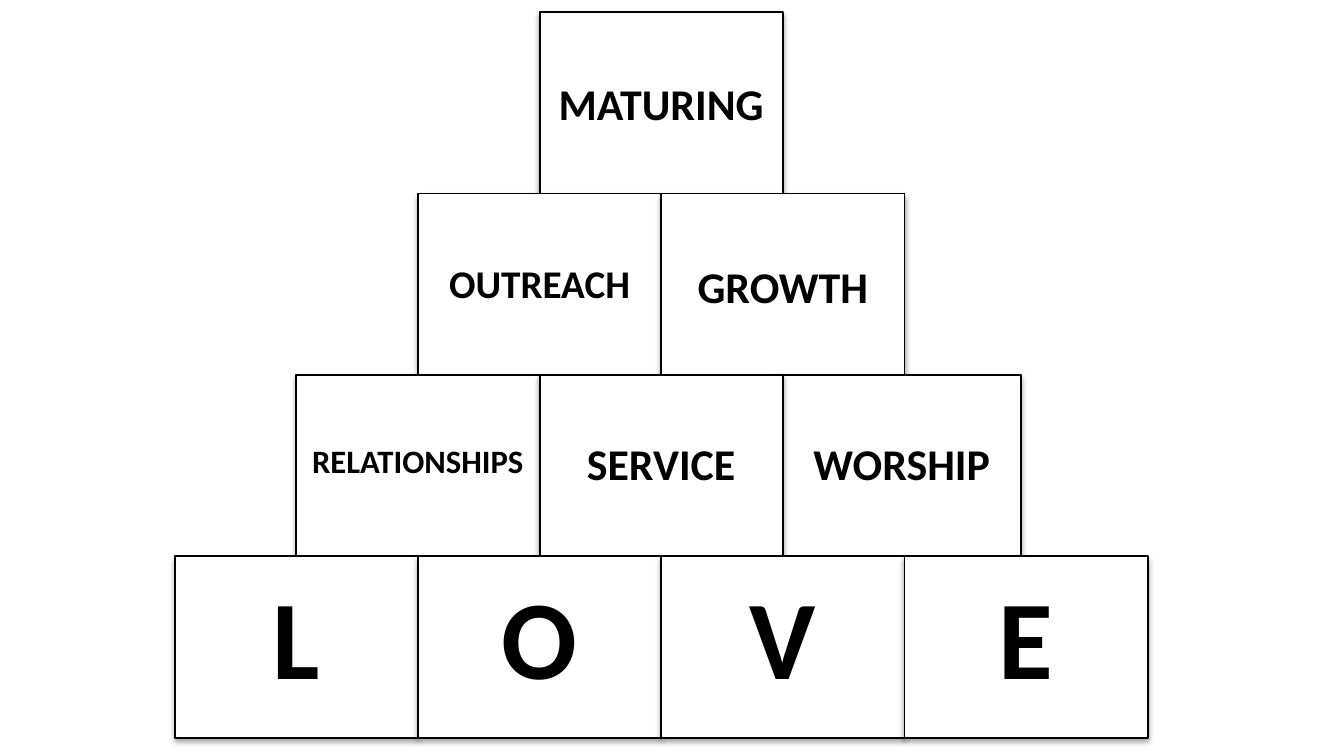
import pptx
import pptx.util
import pptx.dml.color
import pptx.enum.shapes
import pptx.enum.text
import pptx.oxml.ns
from lxml import etree

Inches = pptx.util.Inches
Pt = pptx.util.Pt

COLORS = {"ink": "000000", "paper": "FFFFFF"}
FONT = "Calibri"
WIDE, HIGH = 1.81, 1.35

# Row, column, word, text size, label drop, label height; in drawing order
BLOCKS = [
    (0, 0, "MATURING", 23.5, 0.43, 0.5),
    (1, 0, "OUTREACH", 21, 0.44, 0.45),
    (1, 1, "GROWTH", 23.5, 0.44, 0.5),
    (2, 0, "RELATIONSHIPS", 17.5, 0.44, 0.4),
    (2, 2, "WORSHIP", 23.5, 0.41, 0.5),
    (2, 1, "SERVICE", 23.5, 0.41, 0.5),
] + [(3, col, word, 60, 0.03, 1.11) for col, word in enumerate("LOVE")]


def color(name):
    return pptx.dml.color.RGBColor.from_string(COLORS[name])


def add_shadow(shape):
    """Give the shape a soft shadow straight below it."""
    shape.shadow.inherit = False
    qn = pptx.oxml.ns.qn
    effects = shape._element.spPr.find(qn("a:effectLst"))
    outer = etree.SubElement(
        effects, qn("a:outerShdw"), blurRad=str(Pt(3.1)), dist=str(Pt(1.8)),
        dir="5400000", rotWithShape="0")
    tint = etree.SubElement(outer, qn("a:srgbClr"), val=COLORS["ink"])
    etree.SubElement(tint, qn("a:alpha"), val="35000")


def add_block(slide, left, top, wide, high):
    block = slide.shapes.add_shape(
        pptx.enum.shapes.MSO_SHAPE.RECTANGLE,
        Inches(left), Inches(top), Inches(wide), Inches(high))
    block.fill.solid()
    block.fill.fore_color.rgb = color("paper")
    block.line.color.rgb = color("ink")
    block.line.width = Pt(1)
    add_shadow(block)


def add_label(slide, left, top, wide, high, word, size):
    box = slide.shapes.add_textbox(
        Inches(left), Inches(top), Inches(wide), Inches(high))
    frame = box.text_frame
    frame.word_wrap = True
    frame.auto_size = pptx.enum.text.MSO_AUTO_SIZE.SHAPE_TO_FIT_TEXT
    para = frame.paragraphs[0]
    para.text = word
    para.alignment = pptx.enum.text.PP_ALIGN.CENTER
    para.font.name = FONT
    para.font.size = Pt(size)
    para.font.bold = True
    para.font.color.rgb = color("ink")


def add_pyramid(slide, left, top):
    """Stack the blocks, each row half a block wider on both sides."""
    for row, col, word, size, drop, high in BLOCKS:
        x = left + (3 - row) * WIDE / 2 + col * WIDE
        y = top + row * HIGH
        # The last block of the third row overlaps its neighbour a little
        shift = 0.04 if word == "WORSHIP" else 0
        add_block(slide, x - shift, y, WIDE, HIGH)
        add_label(slide, x, y + drop, WIDE - shift, high, word, size)


def main():
    deck = pptx.Presentation()
    # A 16:9 slide
    deck.slide_width = Inches(10)
    deck.slide_height = deck.slide_width * 9 // 16
    slide = deck.slides.add_slide(deck.slide_layouts[6])
    add_pyramid(slide, 1.3, 0.09)
    deck.save("out.pptx")


if __name__ == "__main__":
    main()
